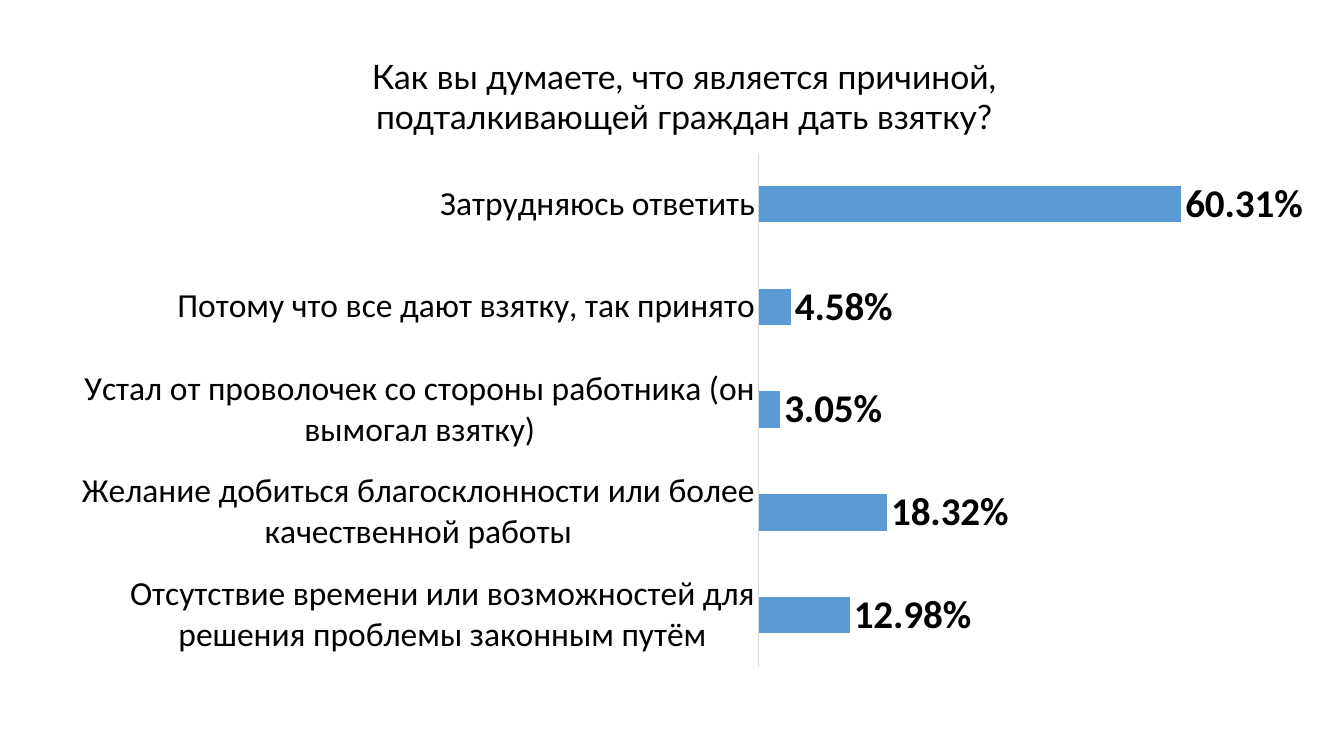
import lxml.etree
import pptx
import pptx.chart.data
import pptx.dml.color
import pptx.enum.chart
import pptx.enum.text
import pptx.oxml.ns
import pptx.util

theme = {
    "text": pptx.dml.color.RGBColor.from_string("000000"),
    "bar": pptx.dml.color.RGBColor.from_string("5B9BD5"),
    "axis": pptx.dml.color.RGBColor.from_string("D9D9D9"),
    "title_font": "Lato",
    "chart_font": "Calibri",
    "body_size": pptx.util.Pt(24),
    "label_size": pptx.util.Pt(28),
    "axis_width": pptx.util.Pt(0.75),
}
title_text = "Как вы думаете, что является причиной, подталкивающей граждан дать взятку?"
answers = {
    "Отсутствие времени или возможностей для решения проблемы законным путём": 0.1298,
    "Желание добиться благосклонности или более качественной работы": 0.1832,
    "Устал от проволочек со стороны работника (он вымогал взятку)": 0.0305,
    "Потому что все дают взятку, так принято": 0.0458,
    "Затрудняюсь ответить": 0.6031,
}
percent_format = "0.00%"
plot_shares = {"x": 0.56, "y": 0.02, "w": 0.4, "h": 0.96}


def style_font(font, name, size, bold=False):
    font.name = name
    font.size = size
    font.bold = bold
    font.color.rgb = theme["text"]


deck = pptx.Presentation()
deck.slide_width = pptx.util.Inches(13.33)
deck.slide_height = pptx.util.Inches(7.5)
page = deck.slides.add_slide(deck.slide_layouts[6])


def place(left, top, width, height):
    wide, high = deck.slide_width / 100, deck.slide_height / 100
    return int(left * wide), int(top * high), int(width * wide), int(height * high)


title_box = page.shapes.add_textbox(*place(17.78, 6.67, 66.24, 12.13))
title_box.text_frame.word_wrap = True
title_box.text_frame.auto_size = pptx.enum.text.MSO_AUTO_SIZE.SHAPE_TO_FIT_TEXT
title_para = title_box.text_frame.paragraphs[0]
title_para.alignment = pptx.enum.text.PP_ALIGN.CENTER
title_span = title_para.add_run()
title_span.text = title_text
style_font(title_span.font, theme["title_font"], theme["body_size"])

survey = pptx.chart.data.CategoryChartData(number_format=percent_format)
survey.categories = list(answers)
survey.add_series("Series 1", list(answers.values()))
chart = page.shapes.add_chart(
    pptx.enum.chart.XL_CHART_TYPE.BAR_CLUSTERED, *place(5.4, 18.8, 91.52, 70.8), survey
).chart
chart.has_title = False
chart.has_legend = False
style_font(chart.font, theme["chart_font"], theme["body_size"])

answer_axis = chart.category_axis
answer_axis.has_major_gridlines = False
answer_axis.major_tick_mark = pptx.enum.chart.XL_TICK_MARK.NONE
answer_axis.minor_tick_mark = pptx.enum.chart.XL_TICK_MARK.NONE
answer_axis.format.line.color.rgb = theme["axis"]
answer_axis.format.line.width = theme["axis_width"]
style_font(answer_axis.tick_labels.font, theme["chart_font"], theme["body_size"])

share_axis = chart.value_axis
share_axis.visible = False
share_axis.has_major_gridlines = False
share_axis.minimum_scale = 0
share_axis.maximum_scale = 0.7
share_axis.tick_labels.number_format = percent_format
share_axis.tick_labels.number_format_is_linked = False

plot = chart.plots[0]
plot.gap_width = 182
plot.vary_by_categories = False
bars = plot.series[0]
bars.format.fill.solid()
bars.format.fill.fore_color.rgb = theme["bar"]
labels = bars.data_labels
labels.show_value = True
labels.number_format = percent_format
labels.number_format_is_linked = False
labels.position = pptx.enum.chart.XL_LABEL_POSITION.OUTSIDE_END
style_font(labels.font, theme["chart_font"], theme["label_size"], bold=True)

qn = pptx.oxml.ns.qn
plot_area = chart.element.find(".//" + qn("c:plotArea"))
for old_layout in plot_area.findall(qn("c:layout")):
    plot_area.remove(old_layout)
layout = lxml.etree.Element(qn("c:layout"))
plot_area.insert(0, layout)
manual = lxml.etree.SubElement(layout, qn("c:manualLayout"))
settings = {"layoutTarget": "inner", "xMode": "edge", "yMode": "edge", **plot_shares}
for tag, value in settings.items():
    lxml.etree.SubElement(manual, qn("c:" + tag)).set("val", str(value))

deck.save("out.pptx")
